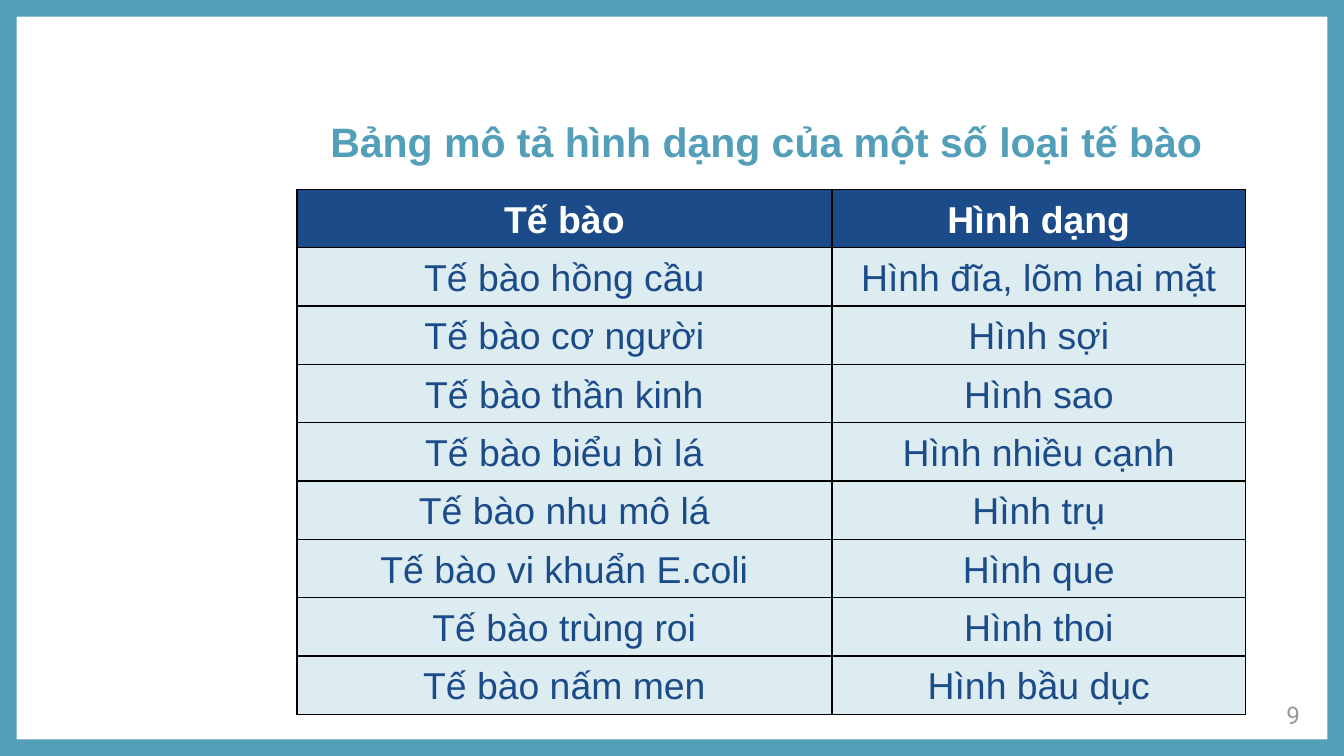
"""Build a slide with a table describing the shapes of several cell types."""
from lxml.etree import SubElement
from pptx import Presentation
from pptx.dml.color import RGBColor
from pptx.enum.shapes import MSO_SHAPE
from pptx.enum.text import MSO_ANCHOR, PP_ALIGN
from pptx.oxml.ns import qn
from pptx.util import Inches, Pt

TITLE = "Bảng mô tả hình dạng của một số loại tế bào"
PAGE = "9"
ROWS = [
    ("Tế bào", "Hình dạng"),
    ("Tế bào hồng cầu", "Hình đĩa, lõm hai mặt"),
    ("Tế bào cơ người", "Hình sợi"),
    ("Tế bào thần kinh", "Hình sao"),
    ("Tế bào biểu bì lá", "Hình nhiều cạnh"),
    ("Tế bào nhu mô lá", "Hình trụ"),
    ("Tế bào vi khuẩn E.coli", "Hình que"),
    ("Tế bào trùng roi", "Hình thoi"),
    ("Tế bào nấm men", "Hình bầu dục"),
]
WIDTH = 10
HEIGHT = WIDTH * 9 / 16
COL_WIDTHS = (3.98, 3.08)
ROW_HEIGHT = 0.41

THEME = {
    "teal": "539EB9", "navy": "1B4C89", "pale": "DDECF1",
    "white": "FFFFFF", "grey": "999999", "border": "000000",
    "font": "Arial", "page_font": "Roboto",
    "title_size": 22, "table_size": 20, "page_size": 13,
    "line_spacing": 24, "space_after": 2, "border_width": 0.75,
}


def color(name):
    return RGBColor.from_string(THEME[name])


def add_run(p, text, size, ink, font="font", bold=False):
    r = p.add_run()
    r.text = text
    r.font.name = THEME[font]
    r.font.size = Pt(THEME[size])
    r.font.bold = bold
    r.font.color.rgb = color(ink)


def add_text(s, box, text, size, ink, align, anchor, **style):
    tf = s.shapes.add_textbox(*map(Inches, box)).text_frame
    tf.word_wrap = True
    tf.vertical_anchor = anchor
    tf.margin_left = tf.margin_right = tf.margin_top = tf.margin_bottom = Inches(0.1)
    p = tf.paragraphs[0]
    p.alignment = align
    add_run(p, text, size, ink, **style)


def style_cell(cell, text, header):
    p = cell.text_frame.paragraphs[0]
    p.alignment = PP_ALIGN.CENTER
    p.line_spacing = Pt(THEME["line_spacing"])
    p.space_after = Pt(THEME["space_after"])
    add_run(p, text, "table_size", "white" if header else "navy", bold=header)
    tc_pr = cell._tc.get_or_add_tcPr()
    for side in ("lnL", "lnR", "lnT", "lnB"):
        ln = SubElement(tc_pr, qn(f"a:{side}"), w=str(Pt(THEME["border_width"])))
        fill = SubElement(ln, qn("a:solidFill"))
        SubElement(fill, qn("a:srgbClr"), val=THEME["border"])
    cell.fill.solid()
    cell.fill.fore_color.rgb = color("navy" if header else "pale")


def add_cell_table(s):
    size = (sum(COL_WIDTHS), ROW_HEIGHT * len(ROWS))
    table = s.shapes.add_table(
        len(ROWS), len(COL_WIDTHS), *map(Inches, (2.21, 1.41, *size))
    ).table
    table.horz_banding = False
    for col, width in zip(table.columns, COL_WIDTHS):
        col.width = Inches(width)
    for i, row in enumerate(ROWS):
        table.rows[i].height = Inches(ROW_HEIGHT)
        for j, text in enumerate(row):
            style_cell(table.cell(i, j), text, header=i == 0)


def main():
    prs = Presentation()
    prs.slide_width, prs.slide_height = Inches(WIDTH), Inches(HEIGHT)
    s = prs.slides.add_slide(prs.slide_layouts[6])
    s.background.fill.solid()
    s.background.fill.fore_color.rgb = color("white")

    frame = s.shapes.add_shape(MSO_SHAPE.FRAME, 0, 0, prs.slide_width, prs.slide_height)
    frame.adjustments[0] = 0.022
    frame.shadow.inherit = False
    frame.fill.solid()
    frame.fill.fore_color.rgb = color("teal")
    frame.line.fill.background()

    add_text(s, (2.36, 0.79, 7.24, 0.54), TITLE, "title_size", "teal",
             PP_ALIGN.LEFT, MSO_ANCHOR.BOTTOM, bold=True)
    add_text(s, (9.27, 5.11, 0.5, 0.43), PAGE, "page_size", "grey",
             PP_ALIGN.RIGHT, MSO_ANCHOR.TOP, font="page_font")
    add_cell_table(s)
    prs.save("out.pptx")


if __name__ == "__main__":
    main()
